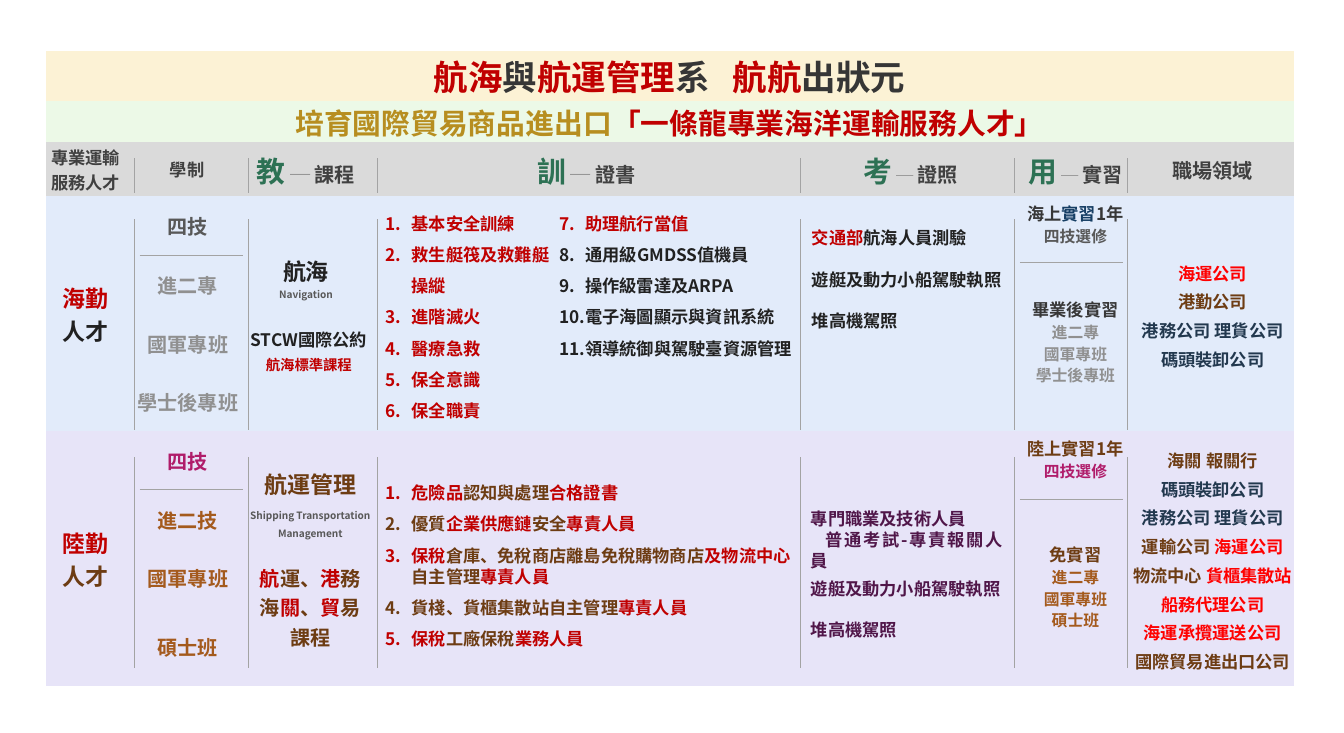
from copy import deepcopy
from dataclasses import dataclass

from lxml import etree
from pptx import Presentation
from pptx.dml.color import RGBColor
from pptx.enum.shapes import MSO_CONNECTOR
from pptx.enum.text import MSO_ANCHOR, MSO_AUTO_SIZE, PP_ALIGN
from pptx.oxml.ns import qn
from pptx.util import Pt

CENTER, JUSTIFY, LEFT = PP_ALIGN.CENTER, PP_ALIGN.JUSTIFY, PP_ALIGN.LEFT
MIDDLE = MSO_ANCHOR.MIDDLE
FIT_SHAPE = MSO_AUTO_SIZE.SHAPE_TO_FIT_TEXT
STRAIGHT = MSO_CONNECTOR.STRAIGHT
PLAIN_TABLE_STYLE = "{2D5ABB26-0587-4C30-8999-92F81FD0307C}"


@dataclass(frozen=True)
class Theme:
    font: str = "Noto Sans CJK SC"
    # Type sizes
    title: int = 24
    heading: int = 20
    group: int = 16
    label: int = 14
    body: int = 12
    small: int = 11
    note: int = 10
    tiny: int = 7
    # Text colours
    red: str = "C00000"
    bright: str = "FF0000"
    ink: str = "212121"
    title_ink: str = "363636"
    intern_ink: str = "373737"
    header_ink: str = "404040"
    gold: str = "B78E20"
    green: str = "2D7154"
    blue: str = "163E64"
    navy: str = "22384E"
    brown: str = "6D3C13"
    tan: str = "A45A1D"
    magenta: str = "B01C6A"
    purple: str = "501649"
    dark_grey: str = "585858"
    grey: str = "808080"
    pale_grey: str = "909090"
    # Fills and rules
    title_fill: str = "FCF2D5"
    slogan_fill: str = "ECF9E7"
    header_fill: str = "DADADA"
    sea_fill: str = "E2EBFA"
    land_fill: str = "E7E4F8"
    rule: str = "A3A3A3"


T = Theme()
COLUMNS = [55.7, 79.9, 91.4, 299.5, 151.2, 78.5, 112.6]
ROWS = [34.8, 28.3, 37.6] + [40.9] * 7 + [54.7]
FILLS = [T.title_fill, T.slogan_fill, T.header_fill] + [T.sea_fill] * 4 + [T.land_fill] * 4
SEA, LAND = 3, 7  # first row of each four-row band


@dataclass
class Para:
    spans: list  # (text, size, colour)
    line: object = None
    before: float = 0
    after: float = 0
    margin: float = 0
    indent: float = 0
    number_from: int = 0


def one(text, size, colour, **style):
    return Para([(text, size, colour)], **style)


def bodies(*pairs, **style):
    return Para([(text, T.body, colour) for text, colour in pairs], **style)


def add_span(para, text, size, colour):
    for index, part in enumerate(text.split("\n")):
        if index:
            para.add_line_break()
            para._p[-1].append(deepcopy(span._r.rPr))
        if part:
            span = para.add_run()
            span.text = part
            span.font.size, span.font.bold = Pt(size), True
            span.font.name = T.font
            span.font.color.rgb = RGBColor.from_string(colour)
            east_asian = etree.SubElement(span._r.rPr, qn("a:ea"))
            east_asian.set("typeface", T.font)


def write(frame, paras, align):
    for index, item in enumerate(paras):
        para = frame.add_paragraph() if index else frame.paragraphs[0]
        para.alignment = align
        if item.line:
            para.line_spacing = item.line
        para.space_before, para.space_after = Pt(item.before), Pt(item.after)
        properties = para._p.get_or_add_pPr()
        properties.set("marL", str(Pt(18 if item.number_from else item.margin)))
        properties.set("indent", str(Pt(-18 if item.number_from else item.indent)))
        if item.number_from:
            number = etree.SubElement(properties, qn("a:buAutoNum"))
            number.set("type", "arabicPeriod")
            number.set("startAt", str(item.number_from))
        for text, size, colour in item.spans:
            add_span(para, text, size, colour)


def add_text(page, left, top, width, height, paras, align=LEFT):
    box = page.shapes.add_textbox(Pt(left), Pt(top), Pt(width), Pt(height))
    box.text_frame.word_wrap = True
    box.text_frame.auto_size = FIT_SHAPE
    write(box.text_frame, paras, align)


def add_rule(page, x1, y1, x2, y2):
    rule = page.shapes.add_connector(STRAIGHT, Pt(x1), Pt(y1), Pt(x2), Pt(y2))
    rule.line.color.rgb = RGBColor.from_string(T.rule)
    rule.line.width = Pt(1)
    etree.SubElement(rule._element.spPr, qn("a:effectLst"))


def add_grid(page):
    grid = page.shapes.add_table(len(ROWS), len(COLUMNS), Pt(31.7), Pt(35.3),
                                 Pt(sum(COLUMNS)), Pt(sum(ROWS))).table
    grid.first_row = grid.horz_banding = False
    grid._tbl.tblPr.find(qn("a:tableStyleId")).text = PLAIN_TABLE_STYLE
    for column, width in zip(grid.columns, COLUMNS):
        column.width = Pt(width)
    for row, height, fill in zip(grid.rows, ROWS, FILLS):
        row.height = Pt(height)
        for cell in row.cells:
            cell.fill.solid()
            cell.fill.fore_color.rgb = RGBColor.from_string(fill)
            cell.margin_left = cell.margin_right = cell.margin_top = cell.margin_bottom = 0
            cell.vertical_anchor = MIDDLE
    # Merged areas
    for row in (0, 1):
        grid.cell(row, 0).merge(grid.cell(row, 6))
    for band in (SEA, LAND):
        for column in (0, 2, 3, 4, 6):
            grid.cell(band, column).merge(grid.cell(band + 3, column))
        grid.cell(band + 1, 5).merge(grid.cell(band + 3, 5))
    return grid


def fill_cell(grid, row, column, *paras, shift=0):
    cell = grid.cell(row, column)
    cell.margin_left = Pt(shift)
    write(cell.text_frame, paras, CENTER)


def fill_headings(grid):
    fill_cell(grid, 0, 0, Para([
        ("航海", T.title, T.red), ("與", T.title, T.title_ink), ("航運管理", T.title, T.red),
        ("系", T.title, T.title_ink), ("　", T.group, T.title_ink),
        ("航航", T.title, T.red), ("出狀元", T.title, T.title_ink)]))
    fill_cell(grid, 1, 0, Para([("培育國際貿易商品進出口", T.heading, T.gold),
                                ("「一條龍專業海洋運輸服務人才」", T.heading, T.red)]))
    fill_cell(grid, 2, 0, one("專業運輸\n服務人才", T.body, T.header_ink))
    fill_cell(grid, 2, 1, one("學制", T.body, T.header_ink), shift=6)
    stages = [("教", "課程", T.label), ("訓", "證書", T.label),
              ("考", "證照", T.body), ("用", "實習", T.body)]
    for column, (stage, result, dash) in enumerate(stages, 2):
        fill_cell(grid, 2, column, Para([(stage, T.heading, T.green), (" ─ ", dash, T.grey),
                                         (result, T.label, T.header_ink)]))
    fill_cell(grid, 2, 6, one("職場領域", T.label, T.header_ink))


def fill_programmes(grid):
    programmes = [("四技", T.dark_grey), ("進二專", T.pale_grey), ("國軍專班", T.pale_grey),
                  ("學士後專班", T.pale_grey), ("四技", T.magenta), ("進二技", T.tan),
                  ("國軍專班", T.tan), ("碩士班", T.tan)]
    for row, (name, colour) in enumerate(programmes, SEA):
        fill_cell(grid, row, 1, one(name, T.label, colour), shift=7)


def fill_sea(grid):
    fill_cell(grid, SEA, 0, Para([("海勤\n", T.group, T.red), ("人才", T.group, T.ink)]))
    fill_cell(grid, SEA, 2,
              Para([("航海\n", T.group, T.ink), ("Navigation", T.tiny, T.dark_grey)]),
              Para([("STCW國際公約\n", T.body, T.ink), ("航海標準課程", T.note, T.red)],
                   line=1.1, before=16, margin=4))
    fill_cell(grid, SEA, 5, Para([
        ("海上", T.body, T.intern_ink), ("實習", T.body, T.blue),
        ("1年\n", T.body, T.intern_ink), ("四技選修", T.small, T.dark_grey)],
        line=Pt(15), after=6))
    fill_cell(grid, SEA + 1, 5, one("畢業後實習", T.body, T.intern_ink, line=Pt(15)),
              one("進二專\n國軍專班\n學士後專班", T.small, T.pale_grey, line=Pt(15)))
    fill_cell(grid, SEA, 6, bodies(("海運公司\n", T.bright), ("港勤公司\n", T.brown),
                                   ("港務公司 理貨公司\n碼頭裝卸公司", T.navy), line=Pt(20)))


def fill_land(grid):
    fill_cell(grid, LAND, 0, Para([("陸勤\n", T.group, T.red), ("人才", T.group, T.brown)]))
    courses = [("航", T.red), ("運、", T.brown), ("港", T.red), ("務\n海", T.brown),
               ("關", T.red), ("、", T.brown), ("貿", T.red), ("易\n課程", T.brown)]
    fill_cell(grid, LAND, 2,
              one("航運管理", T.group, T.brown),
              one("Shipping Transportation\nManagement", T.tiny, T.dark_grey,
                  line=1.2, before=4),
              Para([(text, T.label, colour) for text, colour in courses], before=16), shift=6)
    fill_cell(grid, LAND, 5, Para([("陸上實習1年\n", T.body, T.brown),
                                   ("四技選修", T.small, T.magenta)], line=Pt(15)))
    fill_cell(grid, LAND + 1, 5, Para([("免實習\n", T.body, T.brown),
                                       ("進二專\n國軍專班\n碩士班", T.small, T.tan)], line=Pt(15)))
    employers = [
        [("海關 報關行\n", T.brown), ("碼頭裝卸公司", T.navy)],
        [("港務公司 理貨公司", T.navy)],
        [("運輸公司 ", T.brown), ("海運公司", T.bright)],
        [("物流中心 ", T.brown), ("貨櫃集散站\n船務代理公司\n海運承攬運送公司\n", T.bright),
         ("國際貿易進出口公司", T.brown)]]
    fill_cell(grid, LAND, 6, *[bodies(*pairs, line=Pt(20)) for pairs in employers])


def add_rules(page):
    for top, bottom in ((110.2, 134.4), (152.6, 299.2), (318.2, 464.8)):
        for x in (93.6, 172.8, 262.8, 557.3, 706.3, 784.8):
            add_rule(page, x, top, x, bottom)
    for left, heights in ((97.2, (177.8, 340.6)), (709.9, (182.9, 347.8))):
        for y in heights:
            add_rule(page, left, y, left + 72, y)


def add_certificates(page):
    basic = ["基本安全訓練", "救生艇筏及救難艇操縱", "進階滅火", "醫療急救", "保全意識", "保全職責"]
    add_text(page, 261.4, 138, 135.4, 157.7,
             [one(name, T.body, T.red, line=1.5, number_from=1) for name in basic])
    advanced = [("助理航行當值", T.red), ("通用級GMDSS值機員", T.ink), ("操作級雷達及ARPA", T.ink),
                ("電子海圖顯示與資訊系統", T.ink), ("領導統御與駕駛臺資源管理", T.ink)]
    add_text(page, 382.3, 138, 180, 113.8,
             [bodies(pair, line=1.5, number_from=7) for pair in advanced])
    # Land certificates: red and brown spans alternate
    land = [(T.red, ["危險品", "認知與處理", "合格證書"]),
            (T.brown, ["優質", "企業供應鏈", "安全", "專責人員"]),
            (T.red, ["保稅", "倉庫、免稅商店離島免稅購物商店", "及物流中心", "自主管理", "專責人員"]),
            (T.brown, ["貨棧、貨櫃集散站自主管理", "專責人員"]),
            (T.red, ["保稅", "工廠保稅", "業務人員"])]
    paras = []
    for first, parts in land:
        colours = (T.red, T.brown) if first == T.red else (T.brown, T.red)
        pairs = [(part, colours[index % 2]) for index, part in enumerate(parts)]
        wraps = len(parts) == 5
        paras.append(bodies(*pairs, line=1.0 if wraps else 1.5,
                            before=8 if wraps else 0, number_from=1))
    add_text(page, 261.4, 325.1, 302.4, 131.8, paras)


def add_licences(page):
    shared = "遊艇及動力小船駕駛執照\n堆高機駕照"
    add_text(page, 558, 140.4, 147.6, 94.3, [
        bodies(("交通部", T.red), ("航海人員測驗\n" + shared, T.ink), line=2.0)])
    add_text(page, 557.3, 350.6, 147.6, 36, [
        one("專門職業及技術人員", T.body, T.purple),
        one("普通考試-專責報關人員", T.body, T.purple, indent=10)], JUSTIFY)
    add_text(page, 557.3, 384.5, 147.6, 61.2,
             [one(shared, T.body, T.purple, line=2.0)])


def main():
    deck = Presentation()
    deck.slide_width, deck.slide_height = Pt(935.43), Pt(510.24)
    page = deck.slides.add_slide(deck.slide_layouts[6])
    grid = add_grid(page)
    for fill in (fill_headings, fill_programmes, fill_sea, fill_land):
        fill(grid)
    add_rules(page)
    add_certificates(page)
    add_licences(page)
    deck.save("out.pptx")


if __name__ == "__main__":
    main()
